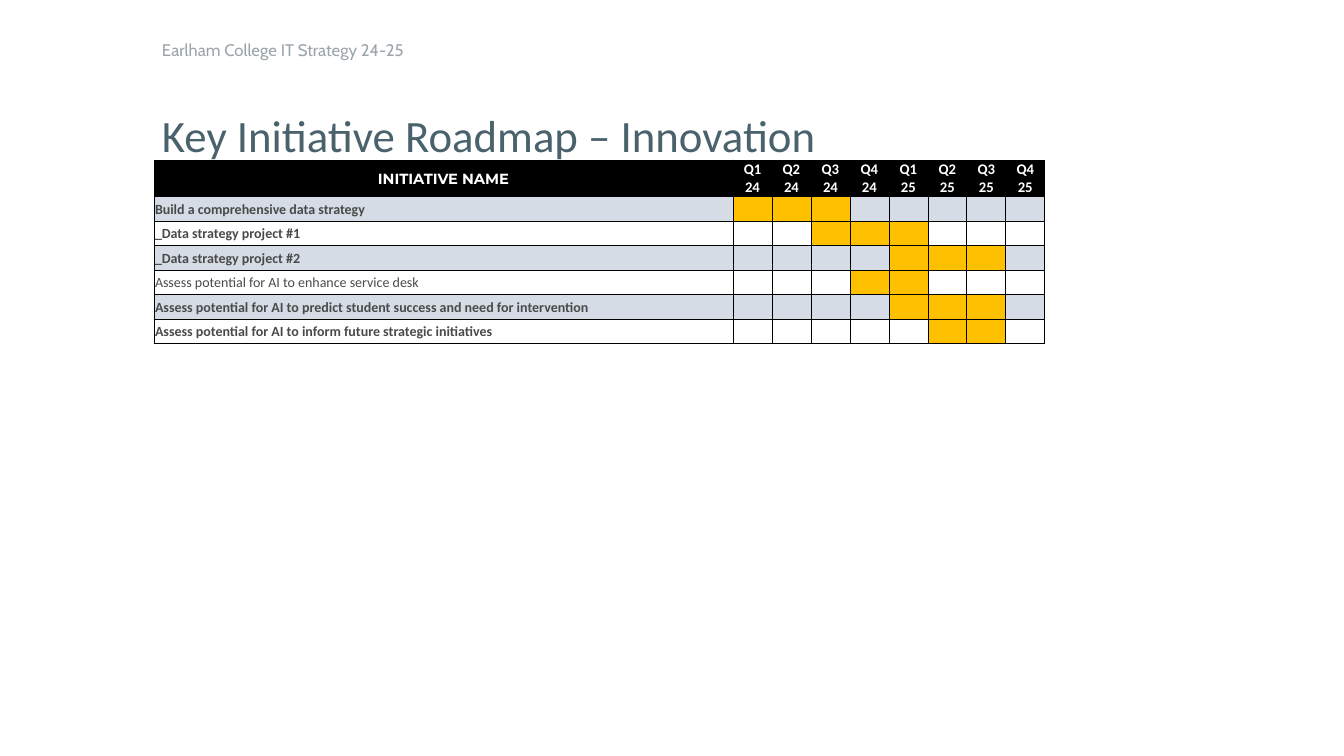
from pptx import Presentation
from pptx.dml.color import RGBColor
from pptx.enum.text import MSO_ANCHOR, MSO_AUTO_SIZE, PP_ALIGN
from pptx.oxml.ns import qn
from pptx.util import Inches, Pt
from lxml.etree import SubElement

BLACK = RGBColor(0x00, 0x00, 0x00)
WHITE = RGBColor(0xFF, 0xFF, 0xFF)
SLATE = RGBColor(0x49, 0x62, 0x6C)
GREY = RGBColor(0x9B, 0xA5, 0xAB)
CHARCOAL = RGBColor(0x49, 0x4A, 0x4A)
BAND = RGBColor(0xD6, 0xDC, 0xE5)
AMBER = RGBColor(0xFF, 0xC0, 0x00)

TITLE = "Key Initiative Roadmap – Innovation"
SECTION = "Earlham College IT Strategy 24-25"
NAME_HEADING = "INITIATIVE NAME"
QUARTERS = [f"Q{quarter}\n{year}" for year in (24, 25) for quarter in (1, 2, 3, 4)]
# Initiative, first and last active quarter (counted from 1), bold
INITIATIVES = [
    ("Build a comprehensive data strategy", 1, 3, True),
    ("_Data strategy project #1", 3, 5, True),
    ("_Data strategy project #2", 5, 7, True),
    ("Assess potential for AI to enhance service desk", 4, 5, False),
    ("Assess potential for AI to predict student success and need for intervention",
     5, 7, True),
    ("Assess potential for AI to inform future strategic initiatives", 6, 7, True),
]

TITLE_FONT = {"name": "Calibri", "size": Pt(32), "bold": False}
SECTION_FONT = {"name": "Cabin", "size": Pt(12), "bold": False}
NAME_HEADING_FONT = {"name": "Montserrat", "size": Pt(10.5), "bold": True}
QUARTER_FONT = {"name": "Calibri", "size": Pt(10.5), "bold": True}
INITIATIVE_FONT = {"name": "Calibri", "size": Pt(10)}

PX = Inches(1) / 100.8
TABLE_LEFT, TABLE_TOP = 154, 160
NAME_WIDTH, QUARTER_WIDTH = 579, 39
HEADER_HEIGHT = 36
ROW_HEIGHTS = [25, 24] * 3


def px(length):
    return round(length * PX)


def format_font(font, values, color):
    for name, value in values.items():
        setattr(font, name, value)
    font.color.rgb = color


def fill_placeholder(shape, text, box, font_values, color, anchor, top_inset):
    shape.left, shape.top, shape.width, shape.height = map(px, box)
    frame = shape.text_frame
    frame_format = {
        "text": text, "word_wrap": True, "auto_size": MSO_AUTO_SIZE.NONE,
        "vertical_anchor": anchor, "margin_left": px(9), "margin_right": px(9),
        "margin_top": px(top_inset), "margin_bottom": 0,
    }
    for name, value in frame_format.items():
        setattr(frame, name, value)
    paragraph = frame.paragraphs[0]
    properties = paragraph._p.get_or_add_pPr()
    properties.set("marL", "0")
    properties.set("indent", "0")
    SubElement(properties, qn("a:buNone"))
    paragraph.alignment = PP_ALIGN.LEFT
    paragraph.line_spacing = 0.9
    paragraph.space_before = Pt(0)
    format_font(paragraph.runs[0].font, font_values, color)


def add_borders(cell):
    properties = cell._tc.get_or_add_tcPr()
    for index, side in enumerate(("lnL", "lnR", "lnT", "lnB")):
        line = properties.makeelement(qn(f"a:{side}"), {"w": str(Pt(0.5))})
        fill = SubElement(line, qn("a:solidFill"))
        SubElement(fill, qn("a:srgbClr"), val=str(BLACK))
        properties.insert(index, line)


def style_cell(cell, fill):
    cell.fill.solid()
    cell.fill.fore_color.rgb = fill
    cell.vertical_anchor = MSO_ANCHOR.MIDDLE
    cell.margin_left = cell.margin_right = cell.margin_top = px(1)
    cell.margin_bottom = 0
    add_borders(cell)


def write_cell(cell, text, font_values, color, alignment):
    cell.text = text
    for paragraph in cell.text_frame.paragraphs:
        paragraph.alignment = alignment
        format_font(paragraph.runs[0].font, font_values, color)


def add_roadmap(slide):
    heights = [HEADER_HEIGHT] + ROW_HEIGHTS
    widths = [NAME_WIDTH] + [QUARTER_WIDTH] * len(QUARTERS)
    box = TABLE_LEFT, TABLE_TOP, sum(widths), sum(heights)
    table = slide.shapes.add_table(len(heights), len(widths), *map(px, box)).table
    table.first_row = table.horz_banding = False
    for column, width in zip(table.columns, widths):
        column.width = px(width)
    for row, height in zip(table.rows, heights):
        row.height = px(height)

    for index, heading in enumerate([NAME_HEADING] + QUARTERS):
        cell = table.cell(0, index)
        style_cell(cell, BLACK)
        font_values = QUARTER_FONT if index else NAME_HEADING_FONT
        write_cell(cell, heading, font_values, WHITE, PP_ALIGN.CENTER)

    for row, (name, first, last, bold) in enumerate(INITIATIVES, start=1):
        band = BAND if row % 2 else WHITE
        name_cell = table.cell(row, 0)
        style_cell(name_cell, band)
        write_cell(name_cell, name, INITIATIVE_FONT | {"bold": bold}, CHARCOAL,
                   PP_ALIGN.LEFT)
        for quarter in range(1, len(QUARTERS) + 1):
            cell = table.cell(row, quarter)
            style_cell(cell, AMBER if first <= quarter <= last else band)
            # Keeps empty cells from stretching the row
            SubElement(cell.text_frame.paragraphs[0]._p, qn("a:endParaRPr"), sz="1000")


def main():
    presentation = Presentation()
    presentation.slide_width, presentation.slide_height = px(1344), px(756)
    slide = presentation.slides.add_slide(presentation.slide_layouts[1])
    title, section = slide.placeholders
    fill_placeholder(title, TITLE, (153, 106, 967, 53), TITLE_FONT, SLATE,
                     MSO_ANCHOR.TOP, 8)
    fill_placeholder(section, SECTION, (153, 38, 382, 26), SECTION_FONT, GREY,
                     MSO_ANCHOR.MIDDLE, 0)
    add_roadmap(slide)
    presentation.save("out.pptx")


if __name__ == "__main__":
    main()
